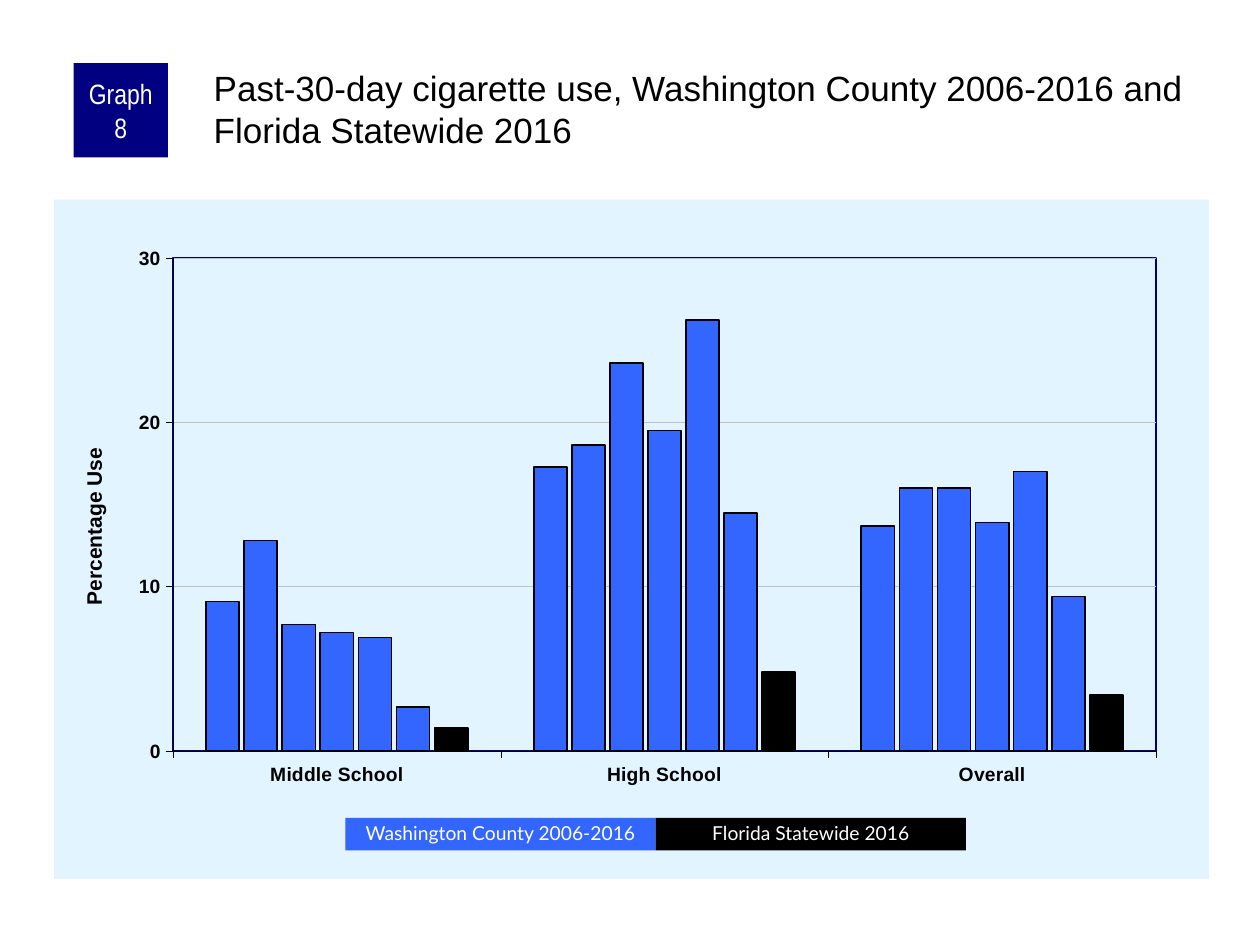
"""Build the slide on past-30-day cigarette use in Washington County."""
from dataclasses import dataclass

from lxml.etree import fromstring
from pptx import Presentation
from pptx.chart.data import CategoryChartData
from pptx.dml.color import RGBColor
from pptx.enum.chart import XL_CHART_TYPE, XL_TICK_MARK
from pptx.enum.shapes import MSO_SHAPE
from pptx.enum.text import MSO_ANCHOR, PP_ALIGN
from pptx.oxml.ns import nsdecls, qn
from pptx.util import Inches, Pt


@dataclass(frozen=True)
class Theme:
    navy: str = "000080"
    blue: str = "3366FF"
    black: str = "000000"
    white: str = "FFFFFF"
    pale: str = "E1F4FF"
    grey: str = "C0C0C0"
    sans: str = "Arial"
    slim: str = "Arial Narrow"
    key: str = "Lato"
    head: int = 20
    tag: int = 16
    name: int = 12
    body: int = 11
    hair: float = 0.25
    edge: float = 1


@dataclass(frozen=True)
class Box:
    """A place on the grid, in columns and rows."""
    col: float
    row: float
    wide: float
    high: float

    def spot(self) -> tuple:
        """Return left, top, width and height in slide units."""
        return tuple(Inches(n * CELL) for n in (self.col, self.row, self.wide, self.high))


@dataclass(frozen=True)
class Label:
    box: Box
    text: str
    fill: str
    face: str
    size: int
    inset: tuple = (0.1, 0.05)
    lead: float = 1.0


COLS, ROWS = 120, 90
CELL = 10 / COLS
T = Theme()
KEY = Box(32.9, 77.9, 29.55, 3.1)
LABELS = [
    Label(Box(7, 6, 9, 9), "Graph 8", T.navy, T.slim, T.tag, (0.05, 0)),
] + [
    Label(Box(KEY.col + i * KEY.wide, KEY.row, KEY.wide, KEY.high),
          text, fill, T.key, T.body, lead=0.9)
    for i, (text, fill) in enumerate([
        ("Washington County 2006-2016", T.blue), ("Florida Statewide 2016", T.black)])
]
TITLE = "Past-30-day cigarette use, Washington County 2006-2016 and Florida Statewide 2016"
USE = {
    "Middle School": (9.1, 12.8, 7.7, 7.2, 6.9, 2.7, 1.4),
    "High School": (17.3, 18.6, 23.6, 19.5, 26.2, 14.5, 4.8),
    "Overall": (13.7, 16, 16, 13.9, 17, 9.4, 3.4),
}


def tint(hue: str) -> RGBColor:
    """Turn a hex string into a colour."""
    return RGBColor.from_string(hue)


def style(font, face: str, size: float, hue: str, bold: bool = False) -> None:
    """Set the face, size, colour and weight of a font."""
    font.name, font.size, font.bold = face, Pt(size), bold
    font.color.rgb = tint(hue)


def rule(line, hue: str, width: float) -> None:
    """Set the colour and width of a line."""
    line.color.rgb, line.width = tint(hue), Pt(width)


def tag(slide, item: Label) -> None:
    """Draw a filled box with centred text."""
    shape = slide.shapes.add_shape(MSO_SHAPE.RECTANGLE, *item.box.spot())
    shape.shadow.inherit = False
    shape.fill.solid()
    shape.fill.fore_color.rgb = tint(item.fill)
    shape.line.fill.background()
    frame = shape.text_frame
    frame.word_wrap, frame.vertical_anchor = True, MSO_ANCHOR.MIDDLE
    frame.margin_left = frame.margin_right = Inches(item.inset[0])
    frame.margin_top = frame.margin_bottom = Inches(item.inset[1])
    para = frame.paragraphs[0]
    para.text, para.alignment, para.line_spacing = item.text, PP_ALIGN.CENTER, item.lead
    style(para.font, item.face, item.size, T.white)


def head(slide, box: Box) -> None:
    """Write the title of the slide."""
    frame = slide.shapes.add_textbox(*box.spot()).text_frame
    frame.word_wrap = True
    frame.margin_left = frame.margin_top = Inches(0.03)
    frame.margin_right = frame.margin_bottom = 0
    para = frame.paragraphs[0]
    para.text = TITLE
    style(para.font, T.sans, T.head, T.black)


def place(node, index: int, inner: bool = False, **share: float) -> None:
    """Fix a chart part by shares of the chart's size."""
    for old in node.findall(qn("c:layout")):
        node.remove(old)
    goal = '<c:layoutTarget val="inner"/>' if inner else ""
    modes = "".join(f'<c:{k}Mode val="edge"/>' for k in "xy")
    sizes = "".join(f'<c:{k} val="{v}"/>' for k, v in share.items())
    node.insert(index, fromstring(
        f'<c:layout {nsdecls("c")}><c:manualLayout>{goal}{modes}{sizes}'
        '</c:manualLayout></c:layout>'))


def paint(fill: str, line: str) -> object:
    """Make the fill and line of a chart area."""
    return fromstring(f'<c:spPr {nsdecls("c", "a")}>{fill}{line}</c:spPr>')


def solid(hue: str) -> str:
    """Return the markup of a solid fill."""
    return f'<a:solidFill><a:srgbClr val="{hue}"/></a:solidFill>'


def graph(slide, box: Box) -> None:
    """Draw the column chart with its axes."""
    data = CategoryChartData()
    data.categories = list(USE)
    for i, vals in enumerate(zip(*USE.values()), 1):
        data.add_series(f"Series {i}", vals)
    chart = slide.shapes.add_chart(
        XL_CHART_TYPE.COLUMN_CLUSTERED, *box.spot(), data).chart
    chart.has_legend = chart.has_title = False
    style(chart.font, T.sans, T.body, T.black)
    plot = chart.plots[0]
    plot.gap_width, plot.overlap, plot.vary_by_categories = 200, -15, False
    bars = list(plot.series)
    for bar in bars:
        bar.format.fill.solid()
        bar.format.fill.fore_color.rgb = tint(T.black if bar is bars[-1] else T.blue)
        rule(bar.format.line, T.black, T.edge)
    for axis in (chart.category_axis, chart.value_axis):
        axis.major_tick_mark, axis.minor_tick_mark = XL_TICK_MARK.OUTSIDE, XL_TICK_MARK.NONE
        style(axis.tick_labels.font, T.sans, T.body, T.black, True)
        rule(axis.format.line, T.black, T.hair)
    axis.minimum_scale, axis.maximum_scale, axis.major_unit = 0, 30, 10
    axis.has_major_gridlines = True
    rule(axis.major_gridlines.format.line, T.grey, T.hair)
    para = axis.axis_title.text_frame.paragraphs[0]
    para.text = "Percentage Use"
    style(para.font, T.sans, T.name, T.black, True)
    place(axis.axis_title._element, 1, x=0.02, y=0.36)
    root = chart._chartSpace.find(qn("c:chart"))
    area = root.find(qn("c:plotArea"))
    place(area, 0, True, x=0.103, y=0.086, w=0.851, h=0.726)
    area.append(paint("<a:noFill/>", f'<a:ln w="{Pt(T.edge)}">{solid(T.navy)}</a:ln>'))
    root.addnext(paint(solid(T.pale), "<a:ln><a:noFill/></a:ln>"))


def main() -> None:
    """Build and save the slide."""
    deck = Presentation()
    deck.slide_width, deck.slide_height = Inches(COLS * CELL), Inches(ROWS * CELL)
    slide = deck.slides.add_slide(deck.slide_layouts[6])
    graph(slide, Box(5.16, 19, 110, 64.7))
    head(slide, Box(20, 6, 95, 10))
    for item in LABELS:
        tag(slide, item)
    deck.save("out.pptx")


if __name__ == "__main__":
    main()
